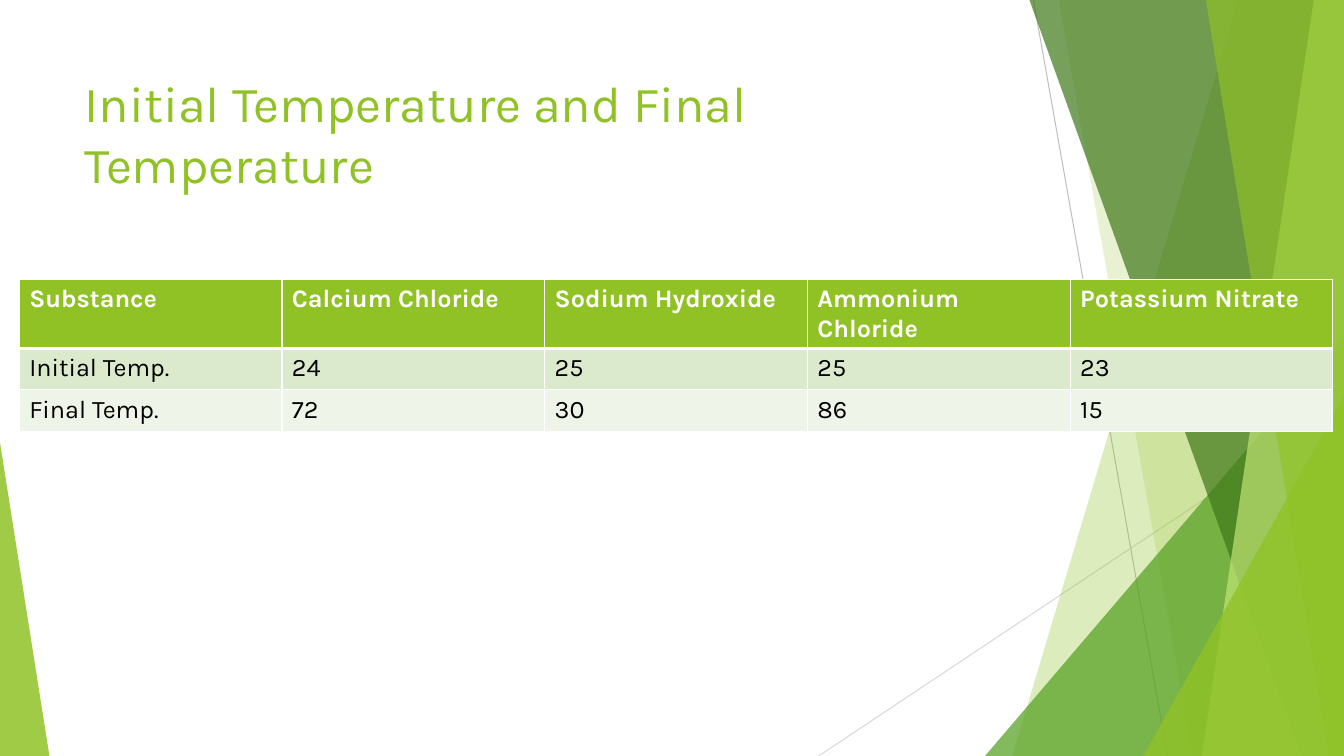
from pptx import Presentation
from pptx.dml.color import RGBColor as RGB
from pptx.enum.shapes import MSO_CONNECTOR as Line, MSO_SHAPE as Kind
from pptx.enum.text import MSO_ANCHOR as Anchor, PP_ALIGN as Align
from pptx.oxml import parse_xml
from pptx.oxml.ns import nsdecls
from pptx.util import Inches, Pt

# Content
TITLE = "Initial Temperature and Final Temperature"
ROWS = [
    ("Substance", "Calcium Chloride", "Sodium Hydroxide",
     "Ammonium Chloride", "Potassium Nitrate"),
    ("Initial Temp.", "24", "25", "25", "23"),
    ("Final Temp.", "72", "30", "86", "15"),
]


class Theme:
    font = "Karla"
    title, body = 36, 18
    green, white, black = "90C226", "FFFFFF", "000000"
    leaf, dark, pale = "54A021", "3F7819", "C0E474"
    bands = ("DBE9CD", "EEF4E8")


WIDE, HIGH = 13.33, 7.5

# Thin lines: start, end, colour
LINES = [
    ((10.25, 0), (11.58, HIGH), "BFBFBF"),
    ((WIDE, 4.03), (8.12, HIGH), "D9D9D9"),
]

# Back to front. Panels run to the right edge: top x, bottom x.
# Wedges stand on the bottom edge: left, top, width, tip (0 left, 1 right).
DECOR = [
    ("panel", (12.28, 10.04), Theme.green, 30),
    ("panel", (10.5, 11.83), Theme.green, 20),
    ("wedge", (9.77, 3.33, 3.56, 1), Theme.leaf, 72),
    ("panel", (10.21, 12.91), Theme.dark, 70),
    ("panel", (13.03, 11.92), Theme.pale, 70),
    ("panel", (11.96, 13.18), Theme.green, 65),
    ("wedge", (11.34, 3.93, 1.99, 1), Theme.green, 80),
    ("wedge", (0, 4.39, 0.49, 0), Theme.green, 85),
]


def color(code):
    return RGB.from_string(code)


def write(para, text, size, code, bold=False):
    run = para.add_run()
    run.text = text
    font = run.font
    font.name, font.size, font.bold = Theme.font, Pt(size), bold
    font.color.rgb = color(code)


def line(slide, start, end, code):
    x1, y1, x2, y2 = map(Inches, start + end)
    rule = slide.shapes.add_connector(Line.STRAIGHT, x1, y1, x2, y2)
    rule.line.color.rgb = color(code)
    rule.line.width = Pt(0.75)
    rule._element.spPr.append(parse_xml(f"<a:effectLst {nsdecls('a')}/>"))


def panel(slide, top, base):
    pen = slide.shapes.build_freeform(Inches(top), 0)
    ends = [(WIDE, 0), (WIDE, HIGH), (base, HIGH)]
    pen.add_line_segments([(Inches(x), Inches(y)) for x, y in ends])
    return pen.convert_to_shape()


def wedge(slide, left, top, width, tip):
    box = map(Inches, (left, top, width, HIGH - top))
    shape = slide.shapes.add_shape(Kind.ISOSCELES_TRIANGLE, *box)
    shape.adjustments[0] = tip
    return shape


def paint(shape, code, alpha):
    shape.shadow.inherit = False
    shape.line.fill.background()
    shape.fill.solid()
    shape.fill.fore_color.rgb = color(code)
    tint = shape._element.spPr.find(".//{*}srgbClr")
    tint.append(parse_xml(f'<a:alpha {nsdecls("a")} val="{alpha * 1000}"/>'))


def edge(cell, base):
    props = cell._tc.get_or_add_tcPr()
    for side, width in (("L", 1), ("R", 1), ("T", 1), ("B", base)):
        props.append(parse_xml(
            f'<a:ln{side} {nsdecls("a")} w="{Pt(width)}"><a:solidFill>'
            f'<a:srgbClr val="{Theme.white}"/></a:solidFill></a:ln{side}>'))


def table(slide):
    box = map(Inches, (0.19, 2.77, 13.03, 1.22))
    grid = slide.shapes.add_table(len(ROWS), len(ROWS[0]), *box).table
    for r, row in enumerate(ROWS):
        head = r == 0
        grid.rows[r].height = Inches(0.41)
        fill = Theme.green if head else Theme.bands[(r - 1) % 2]
        ink = Theme.white if head else Theme.black
        for c, text in enumerate(row):
            cell = grid.cell(r, c)
            edge(cell, 3 if head else 1)
            cell.fill.solid()
            cell.fill.fore_color.rgb = color(fill)
            write(cell.text_frame.paragraphs[0], text, Theme.body, ink, head)


def main():
    deck = Presentation()
    deck.slide_width, deck.slide_height = Inches(WIDE), Inches(HIGH)
    slide = deck.slides.add_slide(deck.slide_layouts[5])

    # Backdrop
    for start, end, code in LINES:
        line(slide, start, end, code)
    draw = {"panel": panel, "wedge": wedge}
    for kind, place, code, alpha in DECOR:
        paint(draw[kind](slide, *place), code, alpha)

    # Title, raised above the backdrop
    title = slide.shapes.title
    title.left, title.top = Inches(0.74), Inches(0.67)
    title.width, title.height = Inches(9.4), Inches(1.44)
    slide.shapes._spTree.append(title._element)
    frame = title.text_frame
    frame.word_wrap = True
    frame.vertical_anchor = Anchor.TOP
    para = frame.paragraphs[0]
    para.alignment = Align.LEFT
    write(para, TITLE, Theme.title, Theme.green)

    # Temperatures
    table(slide)
    deck.save("out.pptx")


if __name__ == "__main__":
    main()
